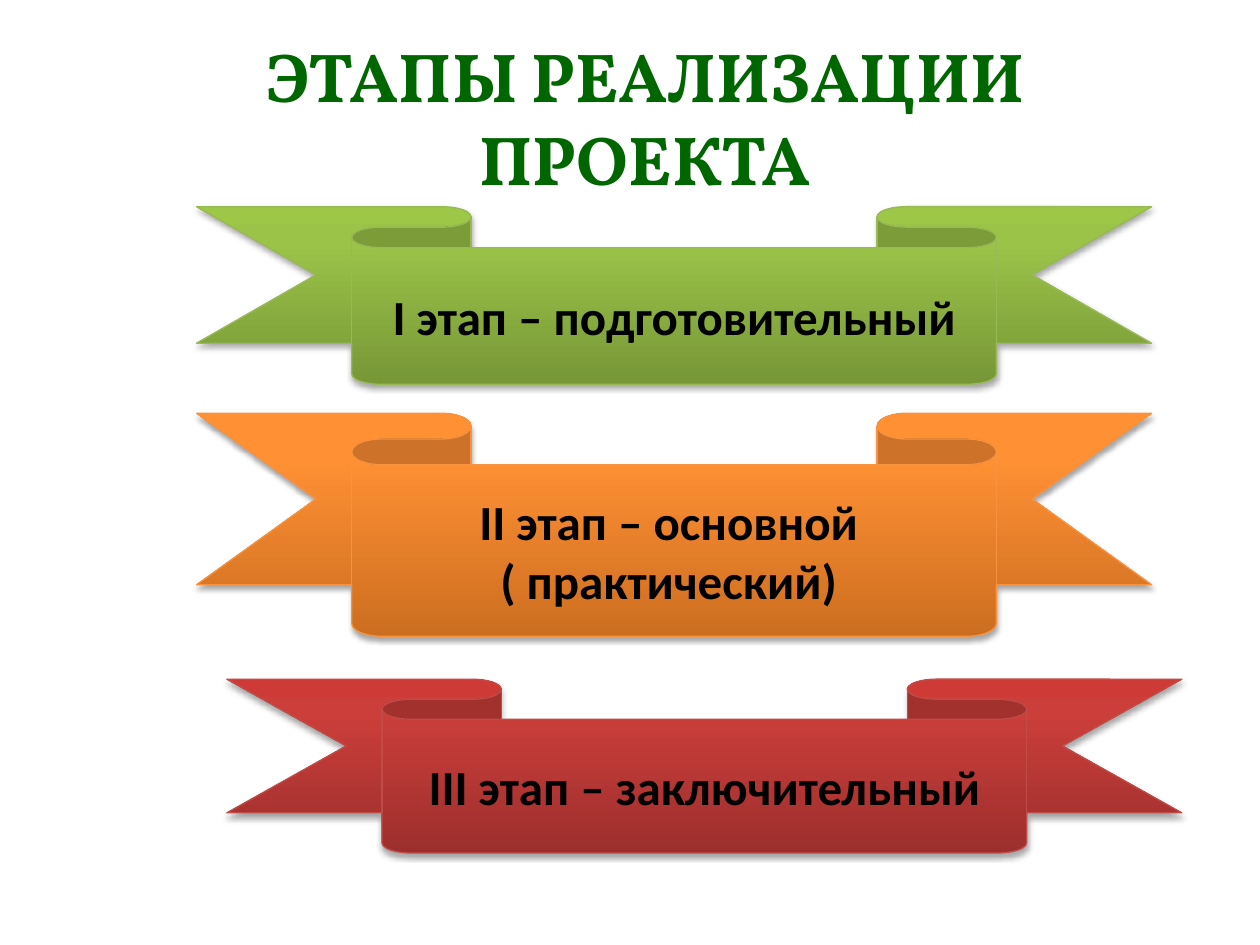
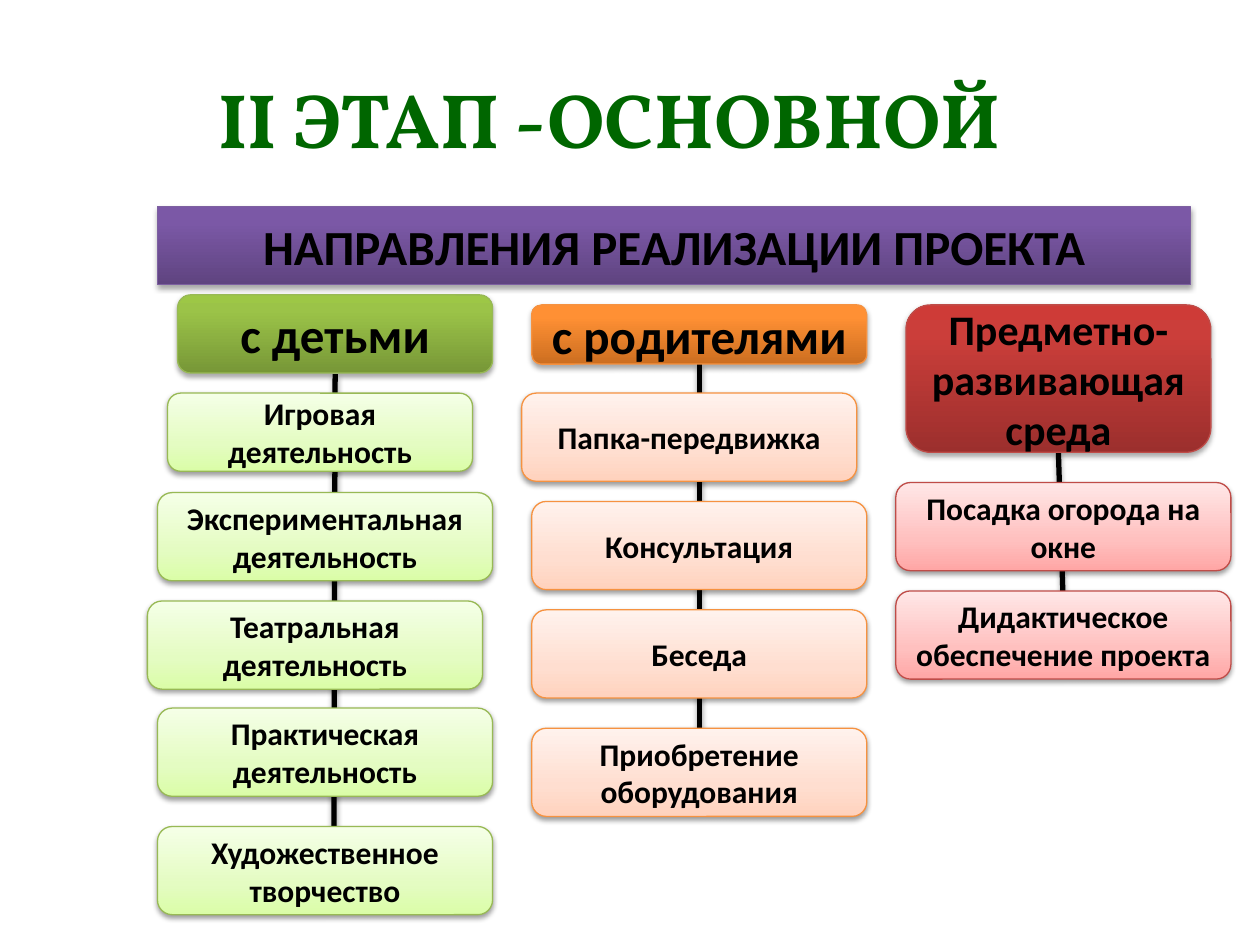
from lxml import etree
from pptx import Presentation
from pptx.dml.color import RGBColor
from pptx.enum.shapes import MSO_CONNECTOR, MSO_SHAPE
from pptx.enum.text import MSO_ANCHOR, PP_ALIGN
from pptx.oxml.ns import qn
from pptx.util import Inches, Pt

RIBBON = MSO_SHAPE.DOWN_RIBBON
ROUNDED = MSO_SHAPE.ROUNDED_RECTANGLE
RECTANGLE = MSO_SHAPE.RECTANGLE
STRAIGHT = MSO_CONNECTOR.STRAIGHT
CENTER = PP_ALIGN.CENTER
MIDDLE = MSO_ANCHOR.MIDDLE

BLACK = RGBColor(0x00, 0x00, 0x00)
TITLE_GREEN = RGBColor(0x00, 0x66, 0x00)
GREEN_LINE = RGBColor(0x98, 0xB9, 0x55)
ORANGE_LINE = RGBColor(0xF6, 0x92, 0x40)
RED_LINE = RGBColor(0xBF, 0x4C, 0x48)
PURPLE_LINE = RGBColor(0x7D, 0x60, 0xA0)

TITLE_FONT = "Vollkorn"
BODY_FONT = "Calibri"


def gradient(middle_position, *codes):
    """Return (position, colour) stops that run from bottom to top."""
    colors = [RGBColor.from_string(code) for code in codes]
    return list(zip((0, middle_position, 100), colors))


# Each style holds gradient stops, outline colour, shadow opacity and offset.
GREEN = (gradient(80, "779737", "9BC348", "9DC746"), GREEN_LINE, 35, 1.8)
ORANGE = (gradient(80, "CC6E20", "FF9034", "FF9136"), ORANGE_LINE, 35, 1.8)
RED = (gradient(80, "9C2F2D", "CB3E3A", "CE3B37"), RED_LINE, 35, 1.8)
PURPLE = (gradient(80, "5F4480", "7B58A6", "7C57A8"), PURPLE_LINE, 35, 1.8)
PALE_GREEN = (gradient(35, "DAFDA7", "E4FCC2", "F5FFE7"), GREEN_LINE, 38, 1.6)
PALE_ORANGE = (gradient(35, "FFD2BD", "FFDED0", "FFF2ED"), ORANGE_LINE, 38, 1.6)
PALE_RED = (gradient(35, "FFA6A5", "FFC0BF", "FFE7E7"), RED_LINE, 38, 1.6)


def add_color(parent, color):
    return etree.SubElement(parent, qn("a:srgbClr"), val=str(color))


def add_shadow(shape, opacity, distance):
    effects = etree.SubElement(shape._element.spPr, qn("a:effectLst"))
    shadow = etree.SubElement(
        effects, qn("a:outerShdw"), blurRad=str(Pt(3.1)),
        dist=str(Pt(distance)), dir="5400000", rotWithShape="0")
    color = add_color(shadow, BLACK)
    etree.SubElement(color, qn("a:alpha"), val=str(opacity * 1000))


def fill_gradient(shape, stops):
    shape.fill.gradient()
    shape.fill.gradient_angle = 90
    stop_list = shape._element.spPr.find(qn("a:gradFill")).find(qn("a:gsLst"))
    for stop in list(stop_list):
        stop_list.remove(stop)
    for position, color in stops:
        stop = etree.SubElement(stop_list, qn("a:gs"), pos=str(position * 1000))
        add_color(stop, color)


def set_text(shape, text, size, font=BODY_FONT, color=BLACK):
    frame = shape.text_frame
    frame.word_wrap = True
    frame.vertical_anchor = MIDDLE
    frame.text = text
    for paragraph in frame.paragraphs:
        paragraph.alignment = CENTER
        paragraph.font.name = font
        paragraph.font.size = Pt(size)
        paragraph.font.bold = True
        paragraph.font.color.rgb = color


def add_title(slide, text, left, top, size):
    box = slide.shapes.add_textbox(
        Inches(left), Inches(top), Inches(7.64), Inches(1.25))
    set_text(box, text, size, font=TITLE_FONT, color=TITLE_GREEN)


def add_block(slide, kind, text, left, top, width, height, style, size=28):
    stops, line_color, opacity, distance = style
    block = slide.shapes.add_shape(
        kind, Inches(left), Inches(top), Inches(width), Inches(height))
    fill_gradient(block, stops)
    block.line.color.rgb = line_color
    block.line.width = Pt(0.75)
    add_shadow(block, opacity, distance)
    set_text(block, text, size)
    return block


def add_ribbon(slide, text, left, top, height, style):
    ribbon = add_block(slide, RIBBON, text, left, top, 7.58, height, style)
    ribbon.adjustments[0] = 0.231
    ribbon.adjustments[1] = 0.675


def add_stem(slide, start_x, start_y, end_x, end_y):
    """Draw the line that runs behind a column of activities."""
    stem = slide.shapes.add_connector(
        STRAIGHT, Inches(start_x), Inches(start_y), Inches(end_x), Inches(end_y))
    stem.line.color.rgb = BLACK
    stem.line.width = Pt(3)
    add_shadow(stem, 35, 1.8)


def add_activities(slide, style, activities):
    for text, left, top, *size in activities:
        width, height = size or (2.66, 0.7)
        add_block(slide, ROUNDED, text, left, top, width, height, style, size=18)


def build_stages(slide):
    add_title(slide, "ЭТАПЫ РЕАЛИЗАЦИИ ПРОЕКТА", 1.3, 0.3, 39.6)
    add_ribbon(slide, "I этап – подготовительный", 1.56, 1.64, 1.41, GREEN)
    add_ribbon(slide, "II этап – основной \n( практический) ", 1.56, 3.28, 1.77, ORANGE)
    add_ribbon(slide, "III этап – заключительный", 1.8, 5.39, 1.38, RED)


def build_directions(slide):
    add_stem(slide, 8.4, 3.59, 8.44, 4.84)
    add_stem(slide, 5.55, 2.89, 5.55, 5.78)
    add_stem(slide, 2.66, 2.97, 2.65, 6.72)
    add_title(slide, "II ЭТАП -ОСНОВНОЙ", 1.02, 0.31, 44)

    add_block(slide, RECTANGLE, "НАПРАВЛЕНИЯ РЕАЛИЗАЦИИ ПРОЕКТА",
              1.25, 1.64, 8.2, 0.62, PURPLE)
    add_block(slide, ROUNDED, "с детьми", 1.41, 2.34, 2.5, 0.62, GREEN)
    add_block(slide, ROUNDED, "с родителями", 4.22, 2.42, 2.66, 0.47, ORANGE)
    add_block(slide, ROUNDED, "Предметно-развивающая среда",
              7.19, 2.42, 2.42, 1.17, RED, size=24)

    add_activities(slide, PALE_GREEN, [
        ("Игровая деятельность", 1.33, 3.12, 2.42, 0.62),
        ("Экспериментальная деятельность", 1.25, 3.91),
        ("Театральная деятельность", 1.17, 4.77),
        ("Практическая деятельность", 1.25, 5.62),
        ("Художественное творчество", 1.25, 6.56),
    ])
    add_activities(slide, PALE_ORANGE, [
        ("Папка-передвижка", 4.14, 3.12),
        ("Консультация", 4.22, 3.98),
        ("Беседа", 4.22, 4.84),
        ("Приобретение оборудования", 4.22, 5.78),
    ])
    add_activities(slide, PALE_RED, [
        ("Посадка огорода на окне", 7.11, 3.83),
        ("Дидактическое обеспечение проекта", 7.11, 4.69),
    ])


def main():
    presentation = Presentation()
    presentation.slide_width = Inches(10)
    presentation.slide_height = Inches(7.5)
    blank = presentation.slide_layouts[6]
    for build in (build_stages, build_directions):
        build(presentation.slides.add_slide(blank))
    presentation.save("out.pptx")


if __name__ == "__main__":
    main()
